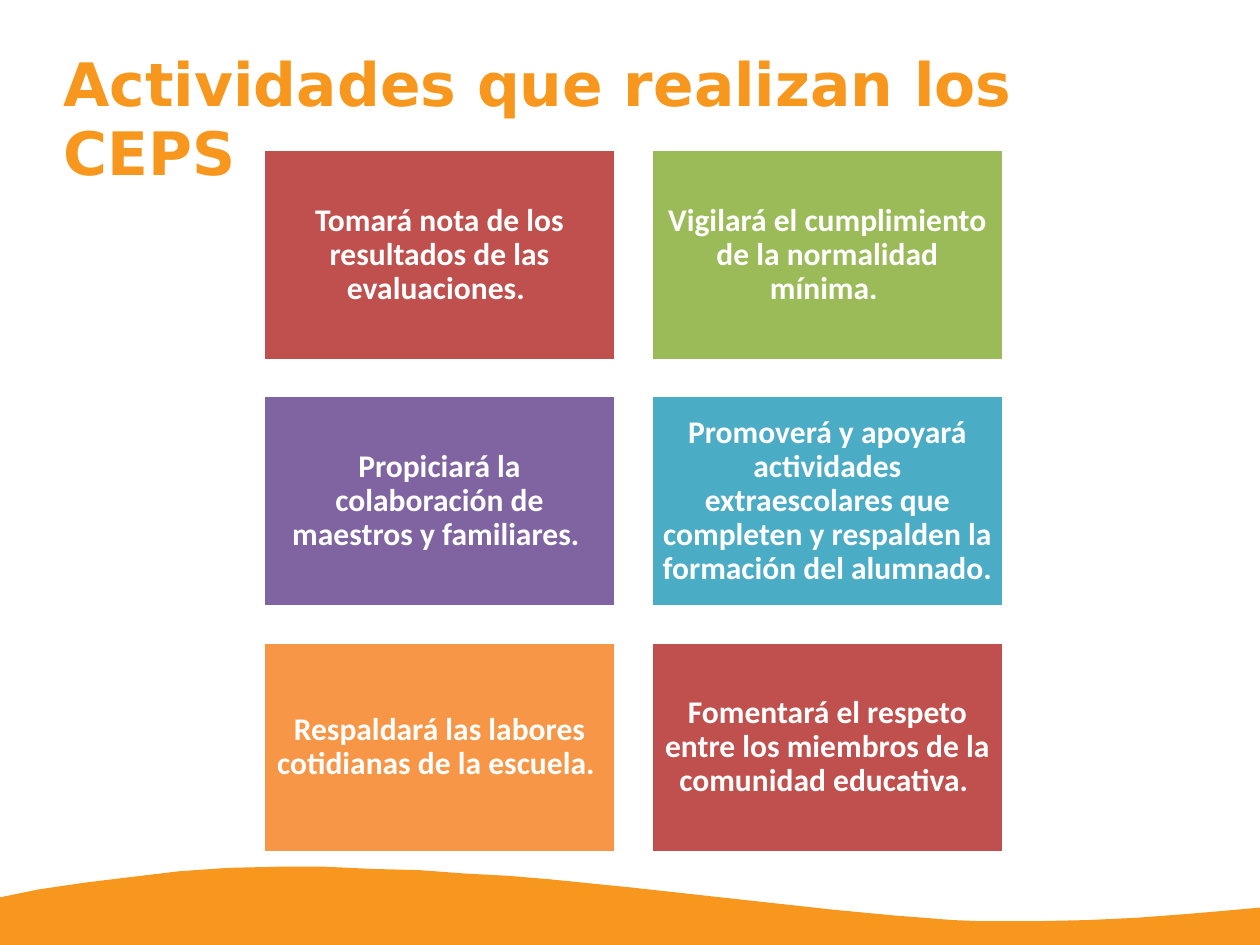
from pptx import Presentation
from pptx import util as u
from pptx.dml.color import RGBColor
from pptx.enum import shapes, text

WHITE = RGBColor(0xFF, 0xFF, 0xFF)
ORANGE = RGBColor(0xF8, 0x97, 0x1D)
RED = RGBColor(0xC0, 0x50, 0x4D)
GREEN = RGBColor(0x9B, 0xBB, 0x59)
PURPLE = RGBColor(0x80, 0x64, 0xA2)
TEAL = RGBColor(0x4B, 0xAC, 0xC6)
PEACH = RGBColor(0xF7, 0x96, 0x46)

ACTIVITIES = [
    ("Tomará nota de los resultados de las evaluaciones. ", RED),
    ("Vigilará el cumplimiento de la normalidad mínima. ", GREEN),
    ("Propiciará la colaboración de maestros y familiares. ", PURPLE),
    ("Promoverá y apoyará actividades extraescolares que completen "
     "y respalden la formación del alumnado. ", TEAL),
    ("Respaldará las labores cotidianas de la escuela. ", PEACH),
    ("Fomentará el respeto entre los miembros de la comunidad educativa. ", RED),
]

# Hundredths of an inch, clockwise from the lower left corner
WAVE = [
    (0, 833), (0, 791), (34, 784), (75, 778), (116, 773), (158, 768),
    (201, 765), (244, 764), (287, 764), (330, 766), (370, 767), (410, 770),
    (448, 772), (484, 775), (554, 782), (736, 802), (789, 807), (815, 809),
    (840, 811), (865, 812), (913, 812), (959, 811), (1002, 809),
    (1042, 806), (1078, 803), (1111, 800), (1111, 833),
]


class Deck:
    """Holds the style, the card grid and the current slide."""

    COLUMNS = 2
    LEFT, TOP = 2.32, 1.32
    CARD_W, CARD_H = 3.11, 1.86
    GAP = 0.31

    def __init__(self, prs):
        self.s = prs.slides.add_slide(prs.slide_layouts[5])

    def set_text(self, tf, words, font, size, color, align, anchor, inset):
        tf.word_wrap = True
        tf.auto_size = text.MSO_AUTO_SIZE.NONE
        tf.vertical_anchor = anchor
        tf.margin_left = tf.margin_right = u.Inches(inset)
        tf.margin_top = tf.margin_bottom = u.Inches(inset)
        p = tf.paragraphs[0]
        p.alignment = align
        r = p.add_run()
        r.text = words
        r.font.name = font
        r.font.size = u.Pt(size)
        r.font.bold = True
        r.font.color.rgb = color
        return p

    def title(self, words):
        sp = self.s.shapes.title
        sp.left, sp.top = u.Inches(0.56), u.Inches(0.43)
        sp.width, sp.height = u.Inches(10.06), u.Inches(0.88)
        p = self.set_text(sp.text_frame, words, "DejaVu Sans", 38, ORANGE,
                          text.PP_ALIGN.LEFT, text.MSO_ANCHOR.TOP, 0)
        p.line_spacing = u.Pt(44.1)

    def card(self, index, words, color):
        row, column = divmod(index, self.COLUMNS)
        sp = self.s.shapes.add_shape(
            shapes.MSO_SHAPE.RECTANGLE,
            u.Inches(self.LEFT + column * (self.CARD_W + self.GAP)),
            u.Inches(self.TOP + row * (self.CARD_H + self.GAP)),
            u.Inches(self.CARD_W), u.Inches(self.CARD_H))
        sp.shadow.inherit = False
        sp.fill.solid()
        sp.fill.fore_color.rgb = color
        sp.line.color.rgb = WHITE
        sp.line.width = u.Pt(2)
        p = self.set_text(sp.text_frame, words, "Calibri", 20, WHITE,
                          text.PP_ALIGN.CENTER, text.MSO_ANCHOR.MIDDLE, 0.08)
        p.line_spacing = 0.9

    def wave(self, points, color):
        builder = self.s.shapes.build_freeform(*points[0], scale=u.Inches(0.01))
        builder.add_line_segments(points[1:], close=True)
        sp = builder.convert_to_shape()
        sp.shadow.inherit = False
        sp.fill.solid()
        sp.fill.fore_color.rgb = color
        sp.line.fill.background()


def main():
    prs = Presentation()
    prs.slide_width, prs.slide_height = u.Inches(11.11), u.Inches(8.33)
    deck = Deck(prs)
    deck.title("Actividades que realizan los CEPS")
    for index, (words, color) in enumerate(ACTIVITIES):
        deck.card(index, words, color)
    deck.wave(WAVE, ORANGE)
    prs.save("out.pptx")


if __name__ == "__main__":
    main()
